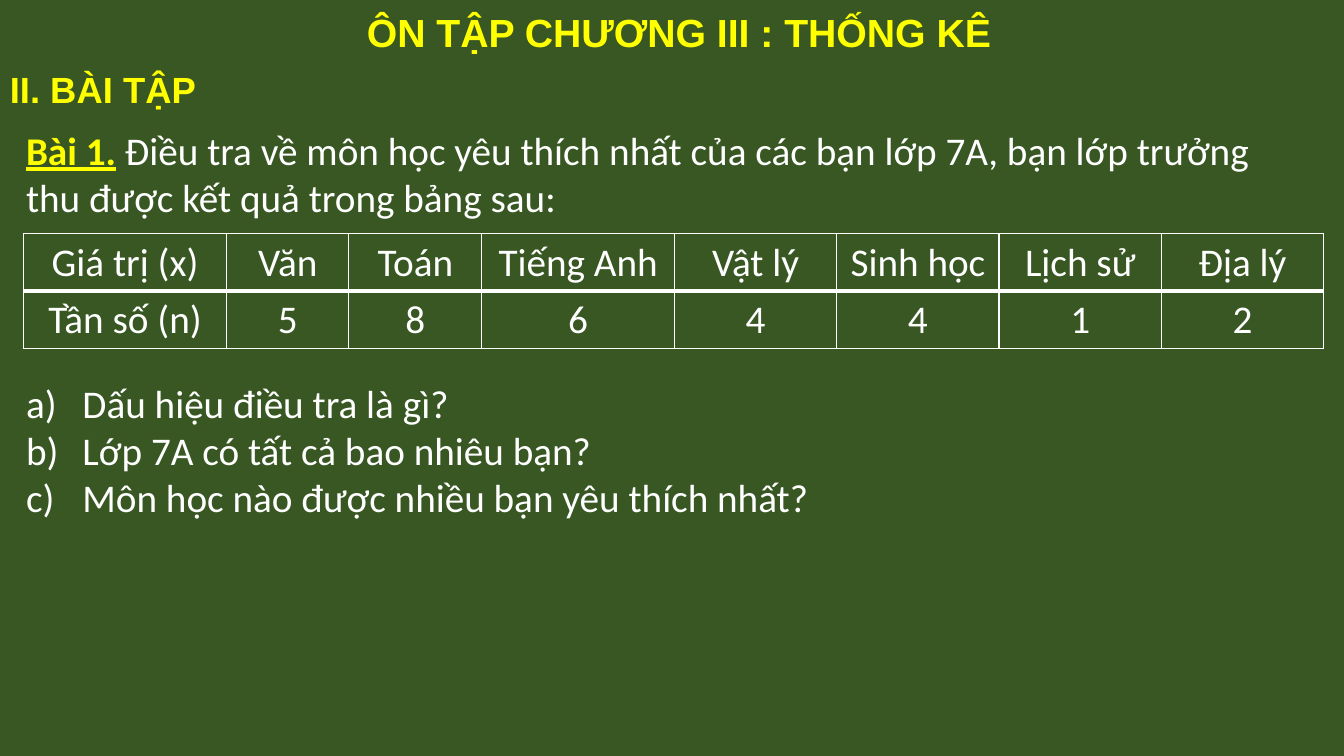
import pptx
import pptx.dml.color
import pptx.enum.text
import pptx.oxml
import pptx.oxml.ns
import pptx.util

Inches = pptx.util.Inches
Pt = pptx.util.Pt
ALIGN = pptx.enum.text.PP_ALIGN

GREEN, YELLOW, WHITE = "385723", "FFFF00", "FFFFFF"
BODY_SIZE = 28
HEADINGS = [
    ("II. BÀI TẬP", (0, 0.62, 2.07, 0.54), 26),
    ("ÔN TẬP CHƯƠNG III : THỐNG KÊ", (3.54, 0.03, 6.57, 0.57), 28),
]
EXERCISE_BOX = (0.16, 1.2, 12.99, 4.17)
EXERCISE_LABEL = "Bài 1."
INTRODUCTION = [
    " Điều tra về môn học yêu thích nhất của các bạn lớp 7A, bạn lớp trưởng ",
    "thu được kết quả trong bảng sau:",
]
QUESTIONS = [
    "Dấu hiệu điều tra là gì?",
    "Lớp 7A có tất cả bao nhiêu bạn?",
    "Môn học nào được nhiều bạn yêu thích nhất?",
]
QUESTION_GAP = 114
QUESTION_INDENT = 0.56
TABLE_BOX = (0.23, 2.32, 12.91, 1.13)
COLUMN_WIDTHS = [2.02, 1.21, 1.32, 1.91, 1.61, 1.61, 1.61, 1.61]
FREQUENCIES = [
    ("Giá trị (x)", "Văn", "Toán", "Tiếng Anh", "Vật lý", "Sinh học", "Lịch sử", "Địa lý"),
    ("Tần số (n)", "5", "8", "6", "4", "4", "1", "2"),
]
BORDERS = [
    {"L": 1, "R": 1, "T": 1, "B": 3},
    {"L": 1, "R": 1, "T": 3, "B": 1},
]


def rgb(color):
    return pptx.dml.color.RGBColor.from_string(color)


def place(box):
    return [Inches(length) for length in box]


def format_run(run, color=WHITE, size=BODY_SIZE, font="Calibri", bold=False):
    run.font.name = font
    run.font.size = Pt(size)
    run.font.bold = bold
    run.font.color.rgb = rgb(color)


def add_heading(slide, text, box, size):
    text_frame = slide.shapes.add_textbox(*place(box)).text_frame
    text_frame.word_wrap = False
    text_frame.text = text
    format_run(text_frame.paragraphs[0].runs[0], YELLOW, size, "Arial", True)


def add_letter(paragraph):
    properties = paragraph._p.get_or_add_pPr()
    properties.set("marL", str(Inches(QUESTION_INDENT)))
    properties.set("indent", str(-Inches(QUESTION_INDENT)))
    numbering = pptx.oxml.parse_xml(
        f'<a:buAutoNum {pptx.oxml.ns.nsdecls("a")} type="alphaLcParenR"/>')
    properties.append(numbering)


def add_exercise(slide):
    text_frame = slide.shapes.add_textbox(*place(EXERCISE_BOX)).text_frame
    text_frame.word_wrap = True
    first = text_frame.paragraphs[0]
    label = first.add_run()
    label.text = EXERCISE_LABEL
    format_run(label, YELLOW, bold=True)
    label.font.underline = True
    for index, text in enumerate(INTRODUCTION + QUESTIONS):
        paragraph = text_frame.add_paragraph() if index else first
        run = paragraph.add_run()
        run.text = text
        format_run(run)
        if index < len(INTRODUCTION):
            paragraph.alignment = ALIGN.JUSTIFY
            continue
        if index == len(INTRODUCTION):
            paragraph.space_before = Pt(QUESTION_GAP)
        add_letter(paragraph)


def add_borders(cell, widths):
    properties = cell._tc.get_or_add_tcPr()
    for side, width in widths.items():
        properties.append(pptx.oxml.parse_xml(
            f'<a:ln{side} {pptx.oxml.ns.nsdecls("a")} w="{Pt(width)}">'
            f'<a:solidFill><a:srgbClr val="{WHITE}"/></a:solidFill></a:ln{side}>'))


def add_frequency_table(slide):
    shape = slide.shapes.add_table(len(FREQUENCIES), len(COLUMN_WIDTHS), *place(TABLE_BOX))
    table = shape.table
    table.first_row = table.horz_banding = False
    for column, width in zip(table.columns, COLUMN_WIDTHS):
        column.width = Inches(width)
    for row_index, values in enumerate(FREQUENCIES):
        for column_index, value in enumerate(values):
            cell = table.cell(row_index, column_index)
            cell.text_frame.text = value
            paragraph = cell.text_frame.paragraphs[0]
            paragraph.alignment = ALIGN.CENTER
            format_run(paragraph.runs[0])
            add_borders(cell, BORDERS[row_index])
            cell.fill.background()


def main():
    presentation = pptx.Presentation()
    presentation.slide_width = Inches(13.33)
    presentation.slide_height = Inches(7.5)
    slide = presentation.slides.add_slide(presentation.slide_layouts[6])
    slide.background.fill.solid()
    slide.background.fill.fore_color.rgb = rgb(GREEN)
    for text, box, size in HEADINGS:
        add_heading(slide, text, box, size)
    add_exercise(slide)
    add_frequency_table(slide)
    presentation.save("out.pptx")


if __name__ == "__main__":
    main()
